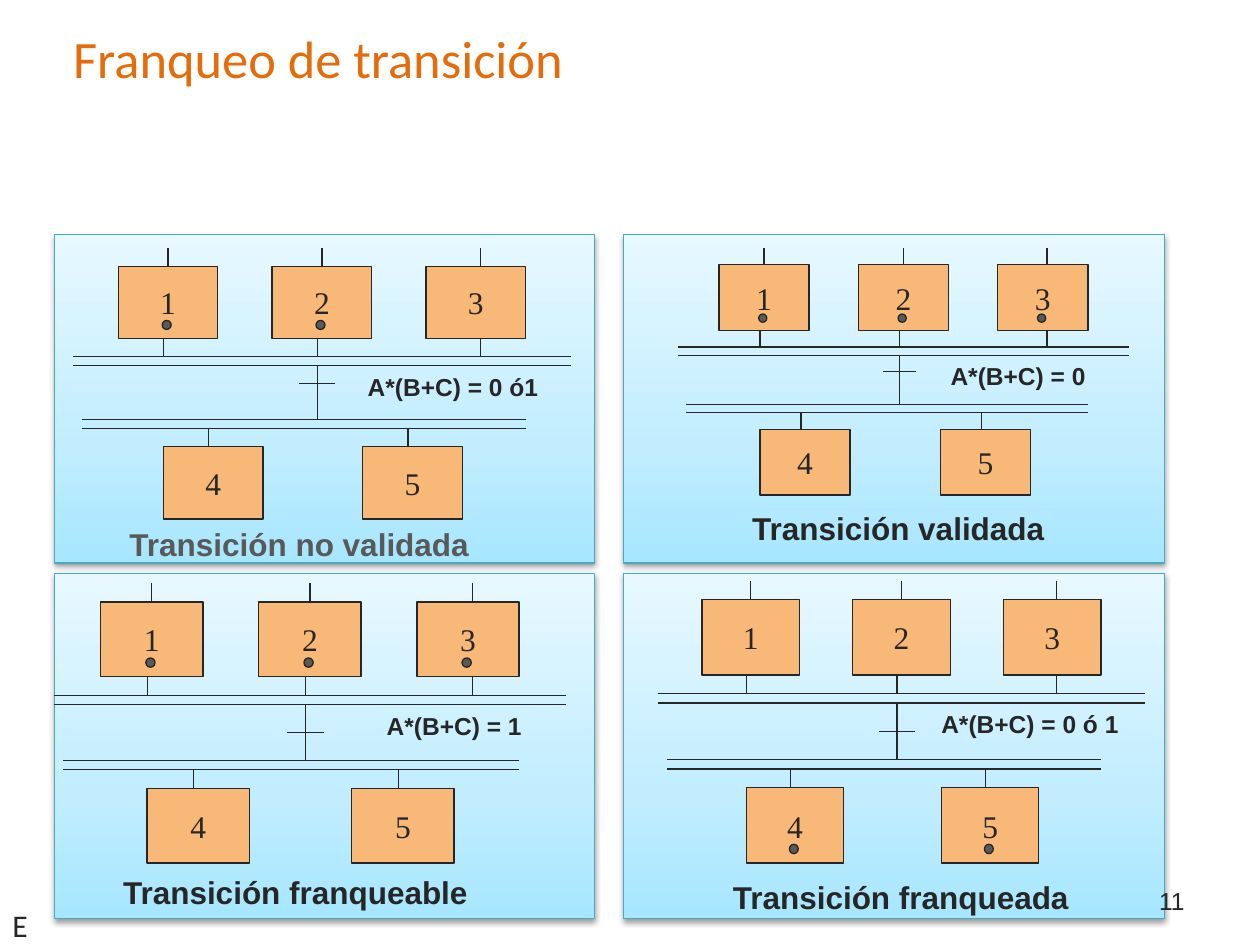
from collections import namedtuple

from lxml import etree
from pptx import Presentation
from pptx import util as u
from pptx.dml.color import RGBColor
from pptx.enum import shapes, text
from pptx.oxml.ns import nsdecls, qn

ORANGE = RGBColor(0xE4, 0x6C, 0x0A)
INK = RGBColor(0x26, 0x26, 0x26)
GREY = RGBColor(0x59, 0x59, 0x59)
STEP_FILL = RGBColor(0xF8, 0xB8, 0x78)
PANEL_LINE = RGBColor(0x46, 0xAA, 0xC5)
PANEL_STOPS = [
    (0, RGBColor(0xA7, 0xE6, 0xFF)),
    (35, RGBColor(0xC1, 0xED, 0xFF)),
    (100, RGBColor(0xE7, 0xF8, 0xFF)),
]

# Slide grid: one column or row per inch
COLUMNS, ROWS = 10, 7.5
# Each diagram has its own grid of 55 columns by 30 rows
DIAGRAM_COLUMNS, DIAGRAM_ROWS = 55, 30
STEP_WIDTH, STEP_HEIGHT = 11, 8
STEPS = {"1": (5, 2), "2": (22, 2), "3": (39, 2), "4": (10, 22), "5": (32, 22)}

Diagram = namedtuple(
    "Diagram", "area marked cross_row condition condition_box caption caption_box caption_color")
DIAGRAMS = [
    Diagram((0.58, 1.97, 3.95, 2.15), "12", 15, "A*(B+C) = 0 ó1", (2.59, 2.9, 2.01, 0.34),
            "Transición no validada", (0.58, 4.12, 3.59, 0.4), GREY),
    Diagram((5.38, 1.97, 3.58, 1.96), "123", 15, "A*(B+C) = 0", (7.17, 2.82, 1.82, 0.34),
            "Transición validada", (5.5, 3.99, 3.26, 0.33), INK),
    Diagram((0.43, 4.63, 4.06, 2.22), "123", 16, "A*(B+C) = 1", (2.57, 5.59, 2.07, 0.34),
            "Transición franqueable", (0.87, 6.88, 2.95, 0.38), INK),
    Diagram((5.22, 4.61, 3.87, 2.24), "45", 16, "A*(B+C) = 0 ó 1", (7.19, 5.58, 1.97, 0.34),
            "Transición franqueada", (5.5, 6.92, 3.3, 0.38), INK),
]


class Board:
    """Style and current slide; every length is in columns and rows of the slide grid."""

    def __init__(self, presentation):
        self.slide = presentation.slides.add_slide(presentation.slide_layouts[5])
        self.column = presentation.slide_width / COLUMNS
        self.row = presentation.slide_height / ROWS

    def place(self, left, top, width, height):
        return (round(left * self.column), round(top * self.row),
                round(width * self.column), round(height * self.row))

    def set_words(self, shape, words, size, font, color=INK, bold=False,
                  align=text.PP_ALIGN.CENTER, anchor=text.MSO_ANCHOR.MIDDLE, wrap=True):
        frame = shape.text_frame
        frame.text = words
        frame.word_wrap = wrap
        frame.vertical_anchor = anchor
        paragraph = frame.paragraphs[0]
        paragraph.alignment = align
        style = paragraph.runs[0].font
        style.size, style.name, style.bold = u.Pt(size), font, bold
        style.color.rgb = color
        return paragraph

    def title(self, words, box):
        shape = self.slide.shapes.title
        shape.left, shape.top, shape.width, shape.height = self.place(*box)
        self.set_words(shape, words, 30, "Calibri", ORANGE, align=text.PP_ALIGN.LEFT)

    def label(self, words, box, size, font="Arial", **style):
        shape = self.slide.shapes.add_textbox(*self.place(*box))
        return self.set_words(shape, words, size, font, **style)

    def solid(self, kind, box, fill, line=INK):
        shape = self.slide.shapes.add_shape(kind, *self.place(*box))
        shape.shadow.inherit = False
        shape.fill.solid()
        shape.fill.fore_color.rgb = fill
        shape.line.color.rgb = line
        shape.line.width = u.Pt(0.75)
        return shape

    def panel(self, box):
        shape = self.solid(shapes.MSO_SHAPE.RECTANGLE, box, PANEL_STOPS[0][1], PANEL_LINE)
        properties = shape.element.spPr
        # Three-stop gradient, running upwards
        stops = "".join(f'<a:gs pos="{share * 1000}"><a:srgbClr val="{color}"/></a:gs>'
                        for share, color in PANEL_STOPS)
        gradient = etree.fromstring(
            f'<a:gradFill {nsdecls("a")} rotWithShape="1"><a:gsLst>{stops}</a:gsLst>'
            '<a:lin ang="16200000" scaled="0"/></a:gradFill>')
        properties.replace(properties.find(qn("a:solidFill")), gradient)
        # Soft shadow below
        properties.find(qn("a:effectLst")).append(etree.fromstring(
            f'<a:outerShdw {nsdecls("a")} blurRad="{u.Pt(3.1)}" dist="{u.Pt(1.6)}" '
            'dir="5400000" rotWithShape="0"><a:srgbClr val="000000">'
            '<a:alpha val="38000"/></a:srgbClr></a:outerShdw>'))

    def line(self, x1, y1, x2, y2):
        connector = self.slide.shapes.add_connector(
            shapes.MSO_CONNECTOR.STRAIGHT, *self.place(x1, y1, x2, y2))
        connector.line.color.rgb = INK
        connector.line.width = u.Pt(0.75)
        etree.SubElement(connector.element.spPr, qn("a:effectLst"))

    def diagram(self, diagram):
        left, top, width, height = diagram.area
        unit_x, unit_y = width / DIAGRAM_COLUMNS, height / DIAGRAM_ROWS

        def point(column, row):
            return left + column * unit_x, top + row * unit_y

        def stroke(column1, row1, column2, row2):
            self.line(*point(column1, row1), *point(column2, row2))

        # Steps
        for name, (column, row) in STEPS.items():
            box = (*point(column, row), STEP_WIDTH * unit_x, STEP_HEIGHT * unit_y)
            step = self.solid(shapes.MSO_SHAPE.RECTANGLE, box, STEP_FILL)
            self.set_words(step, name, 18, "Times New Roman", wrap=False)
        # Double bars
        for row in (12, 13):
            stroke(0, row, 55, row)
        for row in (19, 20):
            stroke(1, row, 50, row)
        # Stems above and below the upper steps, and above the lower ones
        for above, below in ((10.5, 10), (27.5, 27), (45, 45)):
            stroke(above, 0, above, 2)
            stroke(below, 10, below, 12)
        for column in (15, 37):
            stroke(column, 20, column, 22)
        # Transition
        stroke(27, 13, 27, 19)
        stroke(25, diagram.cross_row, 29, diagram.cross_row)
        # Tokens in the active steps
        for name in diagram.marked:
            column, row = STEPS[name]
            box = (*point(column + 4.85, row + 6), unit_x, unit_y)
            self.solid(shapes.MSO_SHAPE.OVAL, box, GREY)
        # Condition and caption
        self.label(diagram.condition, diagram.condition_box, 14, bold=True,
                   anchor=text.MSO_ANCHOR.TOP)
        self.label(diagram.caption, diagram.caption_box, 18, bold=True,
                   color=diagram.caption_color, anchor=text.MSO_ANCHOR.TOP)


def main():
    presentation = Presentation()
    presentation.slide_width, presentation.slide_height = u.Inches(COLUMNS), u.Inches(ROWS)
    board = Board(presentation)
    board.title("Franqueo de transición", (0.48, 0.08, 9.19, 0.75))

    # Two by two panels
    for top, height in ((1.86, 2.61), (4.55, 2.74)):
        for left in (0.43, 4.95):
            board.panel((left, top, 4.29, height))
    for diagram in DIAGRAMS:
        board.diagram(diagram)

    # Footer
    board.label("11", (7.17, 6.95, 2.33, 0.4), 14, align=text.PP_ALIGN.RIGHT)
    mark = board.label("E", (0, 7.16, 0.32, 0.38), 18, "Calibri", wrap=False,
                       align=text.PP_ALIGN.LEFT, anchor=text.MSO_ANCHOR.TOP)
    mark.line_spacing = u.Pt(20)

    presentation.save("out.pptx")


if __name__ == "__main__":
    main()
